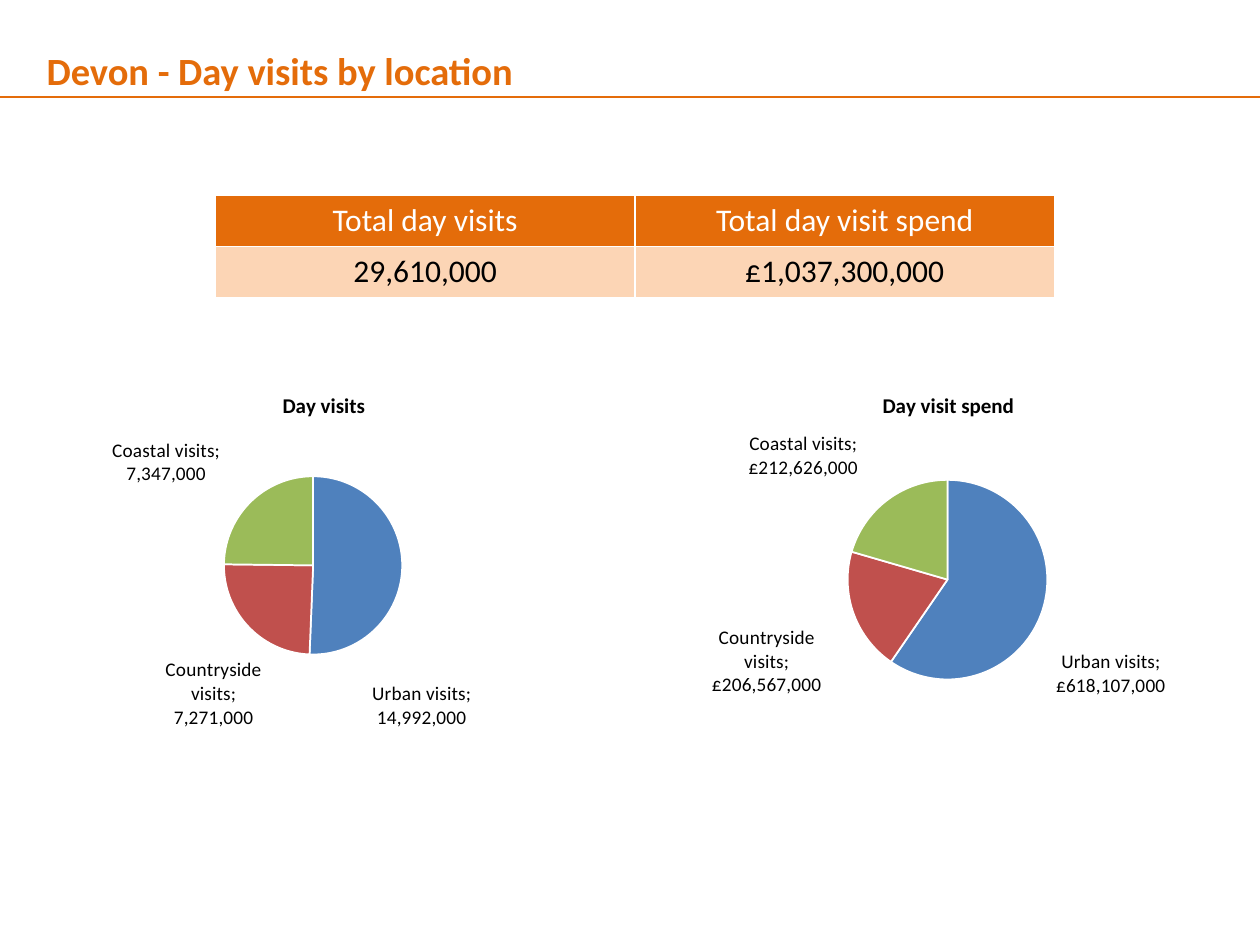
"""Build the Devon day visits slide with a totals table and two pie charts."""
import pptx
import pptx.chart.data
import pptx.dml.color
import pptx.enum.chart
import pptx.enum.shapes
import pptx.enum.text
import pptx.oxml
import pptx.oxml.ns
import pptx.util

Inches, Pt = pptx.util.Inches, pptx.util.Pt
FONT, ORANGE, PEACH, WHITE, BLACK = "Calibri", "E46C0A", "FCD5B5", "FFFFFF", "000000"
TITLE = "Devon - Day visits by location"
ROWS = [
    (("Total day visits", "Total day visit spend"), ORANGE, WHITE),
    (("29,610,000", "£1,037,300,000"), PEACH, BLACK),
]
CATEGORIES = ["Urban visits", "Countryside visits", "Coastal visits"]
SLICES = ["4F81BD", "C0504D", "9BBB59"]
CHARTS = [
    {"title": "Day visits", "values": [14992000, 7271000, 7347000], "format": "#,##0",
     "title_at": (0.43, 0.04), "pie": (0.34, 0.29, 0.29, 0.5),
     "offsets": [(-0.06, 0.39), (0.03, 0.09), (-0.04, -0.03)]},
    {"title": "Day visit spend", "values": [618107000, 206567000, 212626000],
     "format": '"£"#,##0',
     "title_at": (0.39, 0.04), "pie": (0.34, 0.3, 0.32, 0.56),
     "offsets": [(0.01, 0.11), (-0.04, 0.03), (-0.04, -0.04)]},
]


def rgb(value):
    """Return a colour from a hex string."""
    return pptx.dml.color.RGBColor.from_string(value)


def set_font(font, size, color, bold=False):
    """Apply the slide typeface with a size, colour and weight."""
    for name, value in {"name": FONT, "size": Pt(size), "bold": bold}.items():
        setattr(font, name, value)
    font.color.rgb = rgb(color)


def layout_xml(values, modes=()):
    """Return a manual chart layout element."""
    parts = [(m, "edge") for m in modes] + list(zip("xywh", values))
    body = "".join(f'<c:{tag} val="{val}"/>' for tag, val in parts)
    ns = pptx.oxml.ns.nsdecls("c")
    return pptx.oxml.parse_xml(
        f"<c:layout {ns}><c:manualLayout>{body}</c:manualLayout></c:layout>")


def place(parent, layout, index):
    """Put a layout into a chart element in place of any earlier one."""
    for old in parent.findall(pptx.oxml.ns.qn("c:layout")):
        parent.remove(old)
    parent.insert(index, layout)


def show_name_and_value(element):
    """Switch on category and value, parted by a semicolon, without leader lines."""
    qn = pptx.oxml.ns.qn
    flags = {"showVal": "1", "showCatName": "1", "showPercent": "0", "showLeaderLines": "0"}
    for tag, value in flags.items():
        for flag in element.findall(qn(f"c:{tag}")):
            flag.set("val", value)
    last = element.find(qn("c:showBubbleSize"))
    if last is None:
        last = element.find(qn("c:showPercent"))
    last.addnext(pptx.oxml.parse_xml(
        f'<c:separator {pptx.oxml.ns.nsdecls("c")}>; </c:separator>'))


def add_title(s):
    """Fill the title and draw the rule below it."""
    sp = s.shapes.title
    box = {"left": 0.27, "top": 0.25, "width": 9.53, "height": 0.55}
    for name, value in box.items():
        setattr(sp, name, Inches(value))
    tf = sp.text_frame
    tf.text = TITLE
    tf.vertical_anchor = pptx.enum.text.MSO_ANCHOR.TOP
    tf.auto_size = pptx.enum.text.MSO_AUTO_SIZE.NONE
    p = tf.paragraphs[0]
    p.alignment, p.line_spacing = pptx.enum.text.PP_ALIGN.LEFT, 1.2
    set_font(p.runs[0].font, 22, ORANGE, True)
    line = s.shapes.add_connector(
        pptx.enum.shapes.MSO_CONNECTOR.STRAIGHT, 0, Inches(0.77), Inches(10), Inches(0.77))
    line.line.color.rgb, line.line.width = rgb(ORANGE), Pt(0.75)
    line._element.spPr.append(pptx.oxml.parse_xml(
        f'<a:effectLst {pptx.oxml.ns.nsdecls("a")}/>'))


def add_borders(cell):
    """Draw white borders on all sides of a cell."""
    ns = pptx.oxml.ns.nsdecls("a")
    for i, side in enumerate("LRTB"):
        cell._tc.get_or_add_tcPr().insert(i, pptx.oxml.parse_xml(
            f'<a:ln{side} {ns} w="12700"><a:solidFill><a:srgbClr val="{WHITE}"/>'
            f"</a:solidFill></a:ln{side}>"))


def add_totals(s):
    """Add the table of totals."""
    table = s.shapes.add_table(
        2, 2, Inches(1.71), Inches(1.55), Inches(6.66), Inches(0.81)).table
    for r, (texts, fill, color) in enumerate(ROWS):
        for c, text in enumerate(texts):
            cell = table.cell(r, c)
            cell.text = text
            cell.fill.solid()
            cell.fill.fore_color.rgb = rgb(fill)
            p = cell.text_frame.paragraphs[0]
            p.alignment = pptx.enum.text.PP_ALIGN.CENTER
            set_font(p.runs[0].font, 18, color)
            add_borders(cell)


def add_pie(s, left, item):
    """Add one pie chart with placed title, plot and labels."""
    data = pptx.chart.data.CategoryChartData(number_format=item["format"])
    data.categories = CATEGORIES
    data.add_series("Series 1", item["values"])
    chart = s.shapes.add_chart(
        pptx.enum.chart.XL_CHART_TYPE.PIE, Inches(left), Inches(2.96),
        Inches(4.96), Inches(2.83), data).chart
    set_font(chart.font, 18, BLACK)
    chart.has_legend, chart.has_title = False, True
    title = chart.chart_title
    title.text_frame.text = item["title"]
    set_font(title.text_frame.paragraphs[0].runs[0].font, 12, BLACK, True)
    place(title._element, layout_xml(item["title_at"], ("xMode", "yMode")), 1)
    plot = chart.plots[0]
    plot.vary_by_categories = True
    area = layout_xml(item["pie"], ("layoutTarget", "xMode", "yMode"))
    area[0][0].set("val", "inner")
    place(chart._chartSpace.chart.plotArea, area, 0)
    series = plot.series[0]
    labels = series.data_labels
    set_font(labels.font, 11, BLACK)
    formats = {"number_format": item["format"], "number_format_is_linked": False,
               "position": pptx.enum.chart.XL_LABEL_POSITION.OUTSIDE_END}
    for name, value in formats.items():
        setattr(labels, name, value)
    show_name_and_value(labels._element)
    for i, (color, offset) in enumerate(zip(SLICES, item["offsets"])):
        point = series.points[i]
        point.format.fill.solid()
        point.format.fill.fore_color.rgb = rgb(color)
        point.format.line.color.rgb, point.format.line.width = rgb(WHITE), Pt(1)
        label = point.data_label
        set_font(label.font, 11, BLACK)
        label.position = formats["position"]
        place(label._dLbl, layout_xml(offset), 1)
        show_name_and_value(label._dLbl)


def main():
    """Build and save the slide."""
    prs = pptx.Presentation()
    prs.slide_width, prs.slide_height = Inches(10), Inches(7.5)
    s = prs.slides.add_slide(prs.slide_layouts[5])
    add_title(s)
    for i, item in enumerate(CHARTS):
        add_pie(s, 0.08 + 4.96 * i, item)
    add_totals(s)
    prs.save("out.pptx")


if __name__ == "__main__":
    main()
